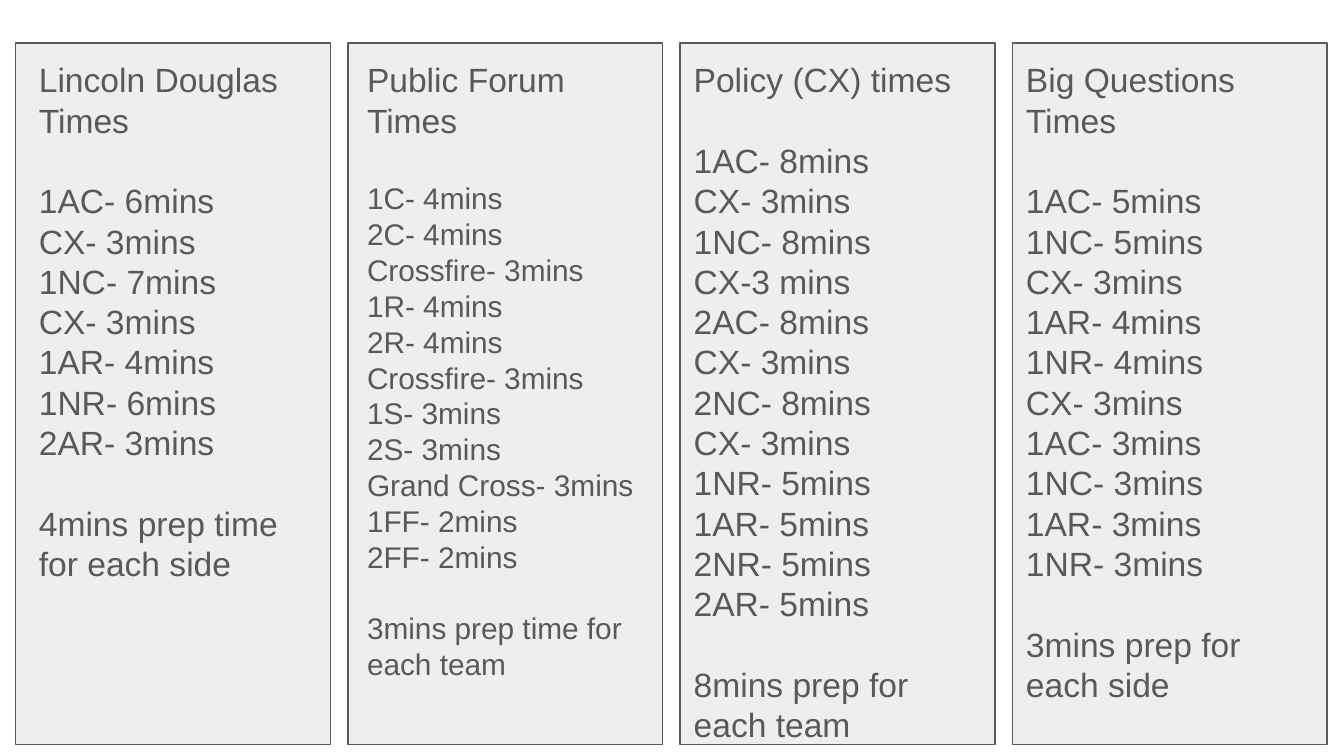
"""Build a slide comparing speech times in four debate formats."""
from dataclasses import dataclass

from lxml import etree
from pptx import Presentation
from pptx.dml.color import RGBColor
from pptx.enum.shapes import MSO_SHAPE
from pptx.enum.text import MSO_ANCHOR, MSO_AUTO_SIZE, PP_ALIGN
from pptx.oxml.ns import qn
from pptx.util import Pt

RECTANGLE = MSO_SHAPE.RECTANGLE
TOP = MSO_ANCHOR.TOP
NO_AUTOFIT = MSO_AUTO_SIZE.NONE
LEFT = PP_ALIGN.LEFT
COMPARISON_LAYOUT = 4


@dataclass(frozen=True)
class Theme:
    font: str = "Arial"
    ink: RGBColor = RGBColor(0x59, 0x59, 0x59)
    panel: RGBColor = RGBColor(0xEE, 0xEE, 0xEE)
    heading_size: float = 18
    small_size: float = 16
    line_height: float = 1.2


@dataclass(frozen=True)
class DebateFormat:
    heading: str
    speeches: tuple[str, ...]
    prep: str
    text_offset: float
    text_width: float
    text_height: float
    size: float


THEME = Theme()
PANEL_LEFT, PANEL_TOP, PANEL_PITCH = 8.4, 23, 178
PANEL_WIDTH, PANEL_HEIGHT = 168.6, 376
TEXT_TOP, INSET = 24.5, 7.2

FORMATS = (
    DebateFormat(
        "Lincoln Douglas Times",
        ("1AC- 6mins", "CX- 3mins", "1NC- 7mins", "CX- 3mins", "1AR- 4mins",
         "1NR- 6mins", "2AR- 3mins"),
        "4mins prep time for each side", 5.2, 158.4, 298, THEME.heading_size),
    DebateFormat(
        "Public Forum Times",
        ("1C- 4mins", "2C- 4mins", "Crossfire- 3mins", "1R- 4mins", "2R- 4mins",
         "Crossfire- 3mins", "1S- 3mins", "2S- 3mins", "Grand Cross- 3mins",
         "1FF- 2mins", "2FF- 2mins"),
        "3mins prep time for each team", 3, 158.4, 373, THEME.small_size),
    DebateFormat(
        "Policy (CX) times",
        ("1AC- 8mins", "CX- 3mins", "1NC- 8mins", "CX-3 mins", "2AC- 8mins",
         "CX- 3mins", "2NC- 8mins", "CX- 3mins", "1NR- 5mins", "1AR- 5mins",
         "2NR- 5mins", "2AR- 5mins"),
        "8mins prep for each team", 0, 168.6, 385, THEME.heading_size),
    DebateFormat(
        "Big Questions Times",
        ("1AC- 5mins", "1NC- 5mins", "CX- 3mins", "1AR- 4mins", "1NR- 4mins",
         "CX- 3mins", "1AC- 3mins", "1NC- 3mins", "1AR- 3mins", "1NR- 3mins"),
        "3mins prep for each side", 0, 165, 364, THEME.heading_size),
)


def write_text(para, text: str, *, size: float, gap_after: float = 0) -> None:
    """Write one unbulleted paragraph in the theme's font."""
    para.alignment = LEFT
    para.line_spacing = Pt(size * THEME.line_height)
    para.space_before = Pt(0)
    para.space_after = Pt(gap_after)
    properties = para._p.get_or_add_pPr()
    properties.set("marL", "0")
    properties.set("indent", "0")
    etree.SubElement(properties, qn("a:buNone"))
    span = para.add_run()
    span.text = text
    span.font.name = THEME.font
    span.font.size = Pt(size)
    span.font.bold = False
    span.font.color.rgb = THEME.ink


def draw_panel(page, left: float):
    """Draw the outlined card behind one list."""
    panel = page.shapes.add_shape(
        RECTANGLE, Pt(left), Pt(PANEL_TOP), Pt(PANEL_WIDTH), Pt(PANEL_HEIGHT))
    panel.shadow.inherit = False
    panel.fill.solid()
    panel.fill.fore_color.rgb = THEME.panel
    panel.line.color.rgb = THEME.ink
    panel.line.width = Pt(0.75)
    return panel


def fill_box(box, debate: DebateFormat, left: float) -> None:
    """Place a body placeholder and write one format's times in it."""
    box.left, box.top = Pt(left + debate.text_offset), Pt(TEXT_TOP)
    box.width, box.height = Pt(debate.text_width), Pt(debate.text_height)
    frame = box.text_frame
    frame.word_wrap = True
    frame.auto_size = NO_AUTOFIT
    frame.vertical_anchor = TOP
    frame.margin_left = frame.margin_right = Pt(INSET)
    frame.margin_top = frame.margin_bottom = Pt(INSET)
    write_text(frame.paragraphs[0], debate.heading, size=THEME.heading_size,
               gap_after=THEME.heading_size * THEME.line_height)
    *speeches, last_speech = debate.speeches
    for speech in speeches:
        write_text(frame.add_paragraph(), speech, size=debate.size)
    write_text(frame.add_paragraph(), last_speech, size=debate.size,
               gap_after=debate.size * THEME.line_height)
    write_text(frame.add_paragraph(), debate.prep, size=debate.size)


def main() -> None:
    """Build and save the deck."""
    deck = Presentation()
    deck.slide_width, deck.slide_height = Pt(720), Pt(405)
    page = deck.slides.add_slide(deck.slide_layouts[COMPARISON_LAYOUT])
    title, *boxes = page.placeholders
    title.element.getparent().remove(title.element)
    for index, (box, debate) in enumerate(zip(boxes, FORMATS)):
        left = PANEL_LEFT + index * PANEL_PITCH
        panel = draw_panel(page, left)
        fill_box(box, debate, left)
        panel.element.addnext(box.element)
    deck.save("out.pptx")


if __name__ == "__main__":
    main()
